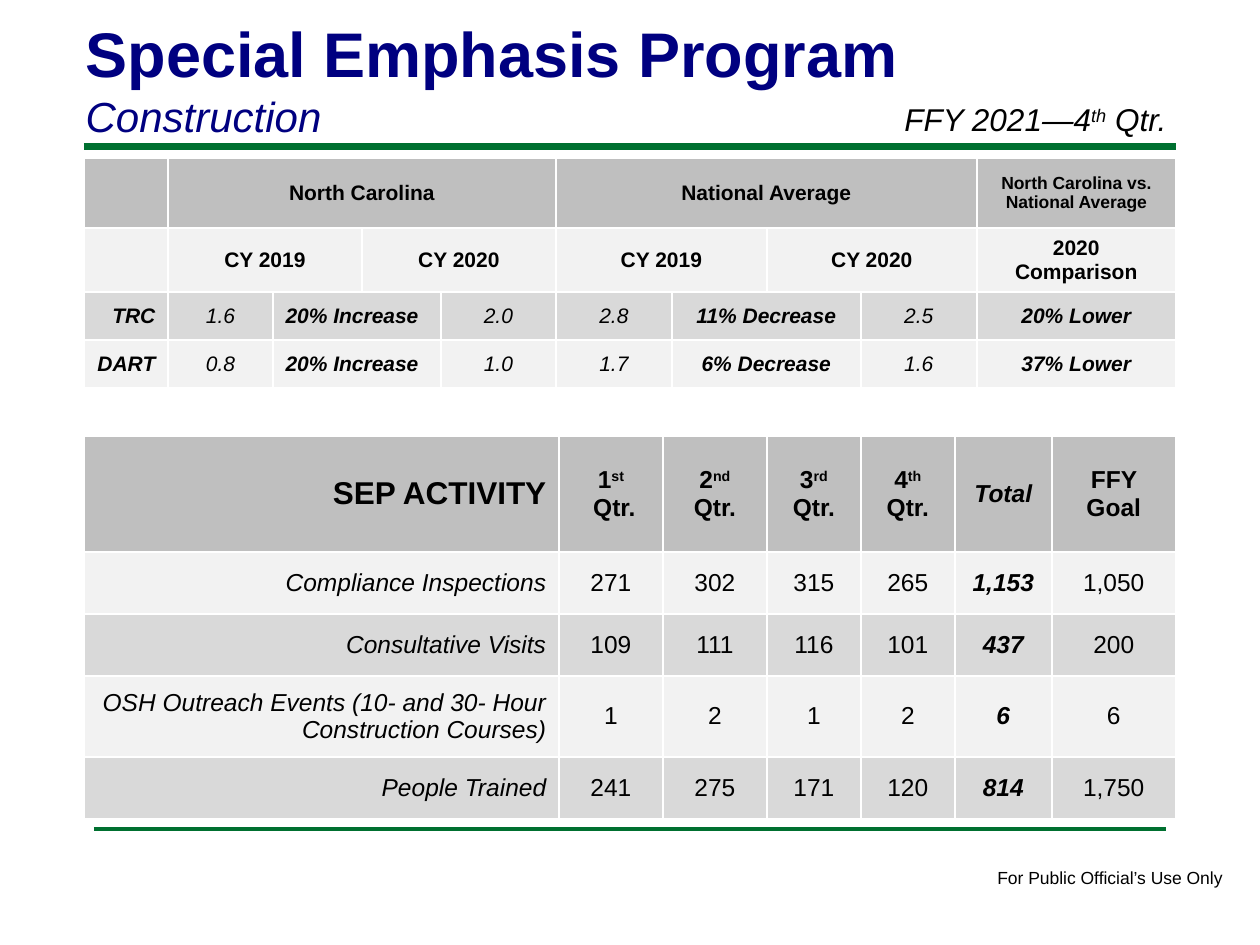
from dataclasses import dataclass

from lxml import etree
from pptx import Presentation
from pptx import util as u
from pptx.dml.color import RGBColor
from pptx.enum import shapes, text
from pptx.oxml import ns

PX = 914400 / 126
HUES = {"navy": "000080", "green": "007030", "black": "000000", "white": "FFFFFF",
        "head": "BFBFBF", "light": "F2F2F2", "mid": "D9D9D9"}
LEFT, MID, RIGHT = text.PP_ALIGN.LEFT, text.PP_ALIGN.CENTER, text.PP_ALIGN.RIGHT


@dataclass
class Cell:
    words: str = ""
    span: int = 1
    size: int = 14
    bold: bool = False
    ital: bool = False
    align: text.PP_ALIGN = MID


@dataclass
class Grid:
    x: int
    y: int
    cols: list[int]
    rows: list[int]
    fills: list[str]
    cells: list[list[Cell]]


@dataclass
class Rule:
    x: int
    y: int
    end: int
    width: int


def px(n: int) -> int:
    return round(n * PX)


def hue(name: str) -> RGBColor:
    return RGBColor.from_string(HUES[name])


def put(frame, words: str, *, size: int, bold: bool = False, ital: bool = False,
        color: str = "black", align: text.PP_ALIGN = LEFT) -> None:
    for line in words.split("\n"):
        para = frame.add_paragraph() if frame.text else frame.paragraphs[0]
        para.alignment = align
        for i, part in enumerate(line.split("^")):
            if not part:
                continue
            run = para.add_run()
            run.text = part
            font = run.font
            font.name, font.size = "Arial", u.Pt(size)
            font.bold, font.italic = bold, ital
            font.color.rgb = hue(color)
            if i % 2:
                run._r.get_or_add_rPr().set("baseline", "30000")


def draw_box(slide, x: int, y: int, w: int, h: int, wrap: bool):
    frame = slide.shapes.add_textbox(px(x), px(y), px(w), px(h)).text_frame
    frame.word_wrap = wrap
    return frame


def draw_rule(slide, rule: Rule) -> None:
    line = slide.shapes.add_connector(shapes.MSO_CONNECTOR.STRAIGHT, px(rule.x),
                                      px(rule.y), px(rule.end), px(rule.y))
    line.line.color.rgb = hue("green")
    line.line.width = u.Pt(rule.width)
    etree.SubElement(line._element.spPr, ns.qn("a:effectLst"))


def edge(cell) -> None:
    props = cell._tc.get_or_add_tcPr()
    for side in ("lnL", "lnR", "lnT", "lnB"):
        line = etree.SubElement(props, ns.qn(f"a:{side}"), w=str(u.Pt(1)))
        fill = etree.SubElement(line, ns.qn("a:solidFill"))
        etree.SubElement(fill, ns.qn("a:srgbClr"), val=HUES["white"])


def draw_grid(slide, grid: Grid) -> None:
    table = slide.shapes.add_table(len(grid.rows), len(grid.cols), px(grid.x), px(grid.y),
                                   px(sum(grid.cols)), px(sum(grid.rows))).table
    table.first_row = table.horz_banding = False
    for col, wide in zip(table.columns, grid.cols):
        col.width = px(wide)
    for r, (high, fill, row) in enumerate(zip(grid.rows, grid.fills, grid.cells)):
        table.rows[r].height = px(high)
        for c in range(len(grid.cols)):
            spot = table.cell(r, c)
            edge(spot)
            spot.fill.solid()
            spot.fill.fore_color.rgb = hue(fill)
        c = 0
        for item in row:
            spot = table.cell(r, c)
            if item.span > 1:
                spot.merge(table.cell(r, c + item.span - 1))
            spot.vertical_anchor = text.MSO_ANCHOR.MIDDLE
            put(spot.text_frame, item.words, size=item.size, bold=item.bold,
                ital=item.ital, align=item.align)
            c += item.span


def rate_row(name: str, *vals: str) -> list[Cell]:
    spans = (1, 2, 1, 1, 2, 1, 1)
    bolds = (False, True, False, False, True, False, True)
    sides = (MID, LEFT, MID, MID, MID, MID, MID)
    return [Cell(name, 1, 12, True, True, RIGHT)] + [
        Cell(val, span, 12, bold, True, side)
        for val, span, bold, side in zip(vals, spans, bolds, sides)]


def work_row(name: str, *vals: str) -> list[Cell]:
    *quarters, total, goal = vals
    return [Cell(name, ital=True, align=RIGHT), *map(Cell, quarters),
            Cell(total, bold=True, ital=True), Cell(goal)]


RATES = Grid(
    84, 158, [84, 105, 89, 79, 115, 116, 95, 94, 116, 199], [70, 64, 48, 48],
    ["head", "light", "mid", "light"],
    [[Cell(), Cell("North Carolina", 4, 12, True), Cell("National Average", 4, 12, True),
      Cell("North Carolina vs. National Average", 1, 10, True)],
     [Cell(), *(Cell(year, 2, 12, True) for year in ("CY 2019", "CY 2020") * 2),
      Cell("2020 Comparison", 1, 12, True)],
     rate_row("TRC", "1.6", "20% Increase", "2.0", "2.8", "11% Decrease", "2.5", "20% Lower"),
     rate_row("DART", "0.8", "20% Increase", "1.0", "1.7", "6% Decrease", "1.6", "37% Lower")])

WORK = Grid(
    84, 436, [475, 104, 104, 94, 94, 97, 124], [116, 62, 62, 81, 62],
    ["head", "light", "mid", "light", "mid"],
    [[Cell("SEP ACTIVITY", 1, 18, True, align=RIGHT),
      *(Cell(name, bold=True) for name in
        ("1^st^\n Qtr.", "2^nd^ Qtr.", "3^rd^ Qtr.", "4^th^ Qtr.")),
      Cell("Total", bold=True, ital=True), Cell("FFY Goal", bold=True)],
     work_row("Compliance Inspections", "271", "302", "315", "265", "1,153", "1,050"),
     work_row("Consultative Visits", "109", "111", "116", "101", "437", "200"),
     work_row("OSH Outreach Events (10- and 30- Hour Construction Courses)",
              "1", "2", "1", "2", "6", "6"),
     work_row("People Trained", "241", "275", "171", "120", "814", "1,750")])

RULES = [Rule(84, 147, 1176, 4), Rule(94, 829, 1166, 2)]


def main() -> None:
    deck = Presentation()
    deck.slide_width, deck.slide_height = px(1260), px(945)
    slide = deck.slides.add_slide(deck.slide_layouts[5])
    title = slide.shapes.title
    title.left, title.top, title.width, title.height = map(px, (73, 8, 1040, 140))
    frame = title.text_frame
    frame.auto_size = text.MSO_AUTO_SIZE.NONE
    frame.vertical_anchor = text.MSO_ANCHOR.MIDDLE
    put(frame, "Special Emphasis Program", size=36, bold=True, color="navy")
    put(frame, "Construction", size=24, ital=True, color="navy")
    for rule in RULES:
        draw_rule(slide, rule)
    put(draw_box(slide, 985, 861, 253, 34, False), "For Public Official’s Use Only", size=10)
    for grid in (WORK, RATES):
        draw_grid(slide, grid)
    put(draw_box(slide, 892, 94, 315, 50, True), "FFY 2021—4^th^ Qtr.", size=18, ital=True)
    deck.save("out.pptx")


if __name__ == "__main__":
    main()
